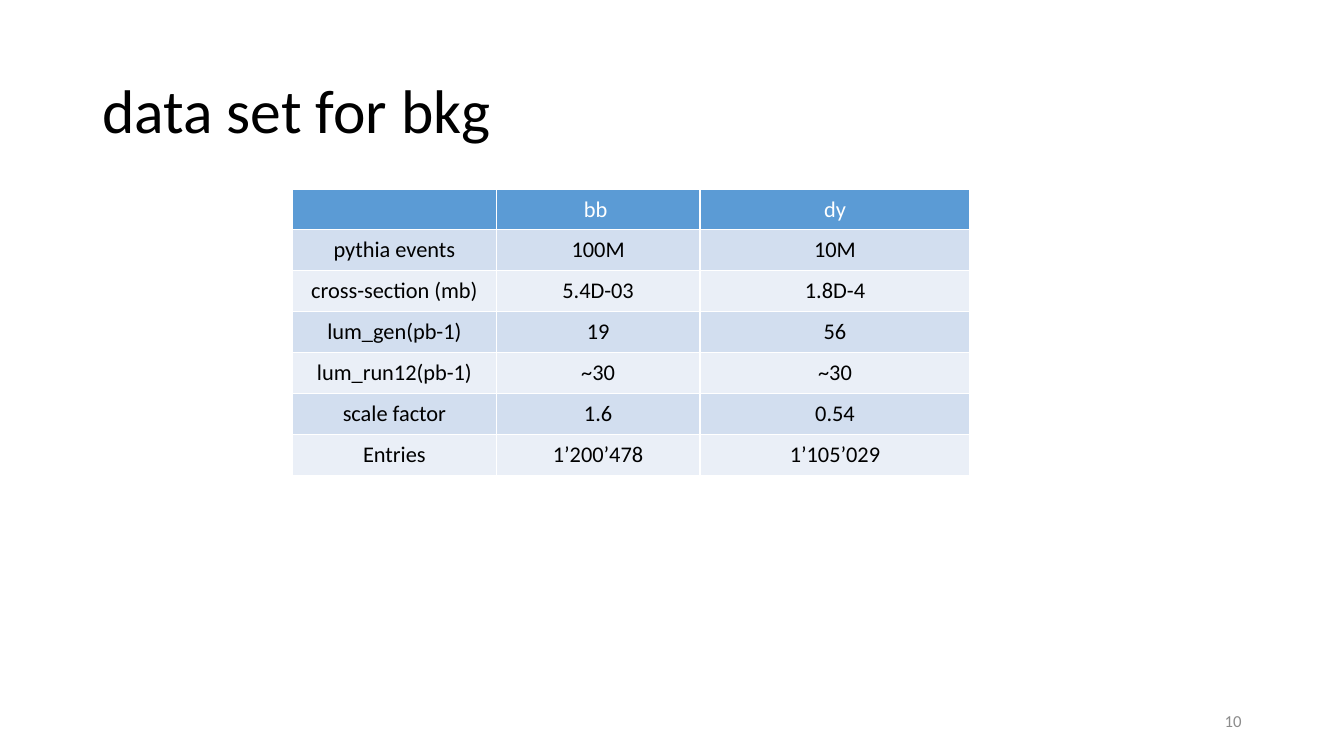
from lxml import etree
from pptx import Presentation
from pptx.dml.color import RGBColor
from pptx.enum import text
from pptx.oxml import ns
from pptx.util import Pt

# Content
TITLE = "data set for bkg"
PAGE = "10"
ROWS = [
    ("", "bb ", "dy"),
    ("pythia events", "100M", "10M"),
    ("cross-section (mb)", "5.4D-03", "1.8D-4"),
    ("lum_gen(pb-1)", "19", "56"),
    ("lum_run12(pb-1)", "~30", "~30"),
    ("scale factor", "1.6", "0.54"),
    ("Entries", "1’200’478", "1’105’029"),
]

# Style
FONT = "Calibri"
BLACK = RGBColor(0x00, 0x00, 0x00)
WHITE = RGBColor(0xFF, 0xFF, 0xFF)
GREY = RGBColor(0x8C, 0x8C, 0x8C)
HEADER = RGBColor(0x5B, 0x9B, 0xD5)
BANDS = [RGBColor(0xEA, 0xEF, 0xF7), RGBColor(0xD2, 0xDE, 0xEF)]

# Layout in points
TABLE_LEFT, TABLE_TOP = 209, 135
COL_WIDTHS = [145.5, 145.5, 193]
ROW_HEIGHT = 29.2


def write(tf, words, size, color, align):
    p = tf.paragraphs[0]
    p.alignment = align
    r = p.add_run()
    r.text = words
    r.font.name = FONT
    r.font.size = Pt(size)
    r.font.color.rgb = color
    return p


def add_text(s, box, words, size, color, align):
    tf = s.shapes.add_textbox(*map(Pt, box)).text_frame
    tf.word_wrap = True
    tf.vertical_anchor = text.MSO_ANCHOR.MIDDLE
    return write(tf, words, size, color, align)


def add_borders(cell, color, width):
    tcPr = cell._tc.get_or_add_tcPr()
    for i, side in enumerate(("lnL", "lnR", "lnT", "lnB")):
        ln = etree.Element(ns.qn("a:" + side), w=str(Pt(width)))
        fill = etree.SubElement(ln, ns.qn("a:solidFill"))
        etree.SubElement(fill, ns.qn("a:srgbClr"), val=str(color))
        tcPr.insert(i, ln)


prs = Presentation()
prs.slide_width, prs.slide_height = Pt(960), Pt(540)
s = prs.slides.add_slide(prs.slide_layouts[6])

# Title
p = add_text(s, (66, 28.75, 828, 104.4), TITLE, 44, BLACK, text.PP_ALIGN.LEFT)
p.line_spacing = 0.9

# Table
table = s.shapes.add_table(
    len(ROWS), len(COL_WIDTHS), Pt(TABLE_LEFT), Pt(TABLE_TOP),
    Pt(sum(COL_WIDTHS)), Pt(ROW_HEIGHT * len(ROWS))).table
for col, width in zip(table.columns, COL_WIDTHS):
    col.width = Pt(width)
for i, row in enumerate(ROWS):
    table.rows[i].height = Pt(ROW_HEIGHT)
    for j, words in enumerate(row):
        cell = table.cell(i, j)
        cell.vertical_anchor = text.MSO_ANCHOR.MIDDLE
        cell.fill.solid()
        cell.fill.fore_color.rgb = BANDS[i % 2] if i else HEADER
        add_borders(cell, WHITE, 1)
        if words:
            write(cell.text_frame, words, 16, BLACK if i else WHITE,
                  text.PP_ALIGN.CENTER)

# Page number
add_text(s, (678, 500.5, 216, 28.75), PAGE, 12, GREY, text.PP_ALIGN.RIGHT)

prs.save("out.pptx")
